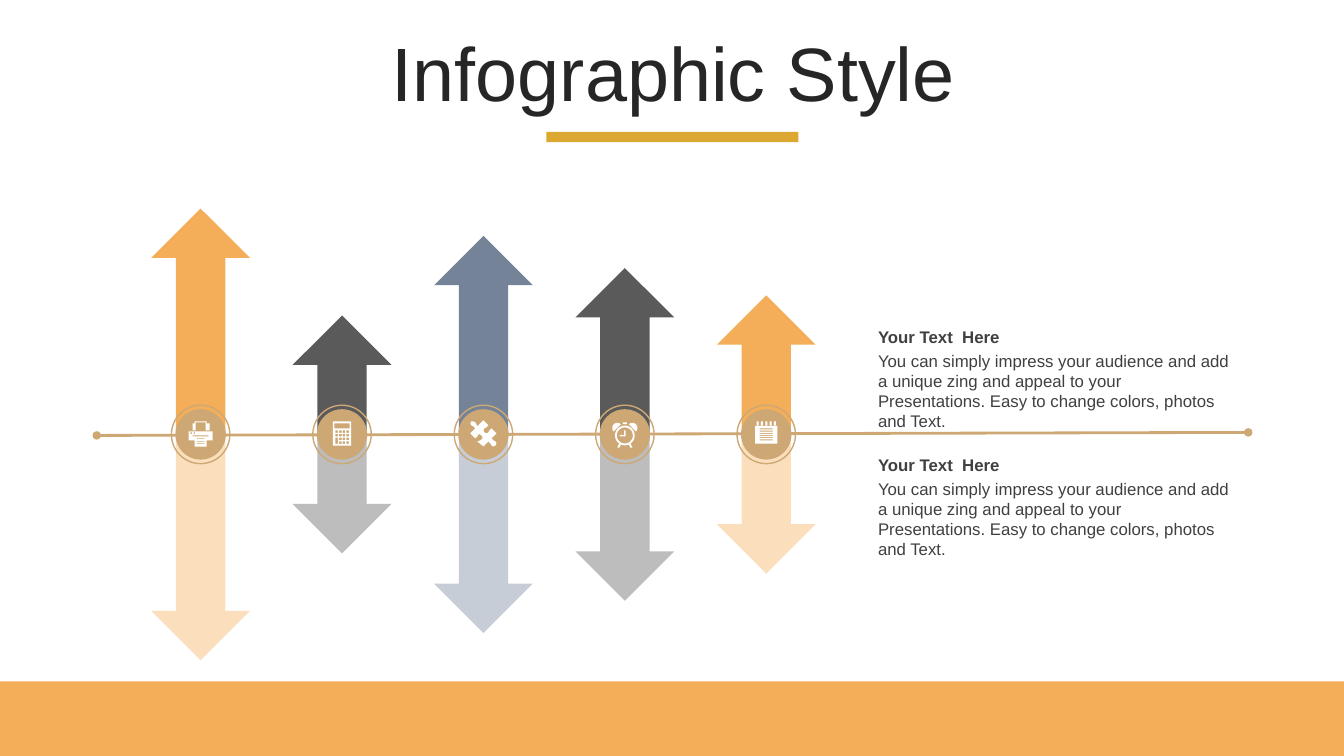
from math import cos, radians, sin

from pptx import Presentation
from pptx.dml.color import RGBColor
from pptx.enum.shapes import MSO_CONNECTOR as CONNECTOR, MSO_SHAPE as SHAPE
from pptx.enum.text import MSO_ANCHOR as ANCHOR, MSO_AUTO_SIZE as AUTO, PP_ALIGN as ALIGN
from pptx.oxml import parse_xml
from pptx.oxml.ns import nsdecls
from pptx.util import Inches, Pt

ORANGE, GOLD, TAN, WHITE = "F4AE59", "DDA832", "CDA874", "FFFFFF"
FIRST_X, LAST_X, AXIS_Y = 1.99, 7.6, 4.31
ARROW_WIDTH = 0.98


def color(hex_code):
    return RGBColor.from_string(hex_code)


def apply(target, values):
    for name, value in values.items():
        setattr(target, name, value)


def box(x, y, width, height):
    return [(x, y), (x + width, y), (x + width, y + height), (x, y + height)]


def arc(x, y, radius, start=0, end=360):
    """Points along a circle, angles in degrees clockwise from the right."""
    angles = [radians(start + (end - start) * step / 24) for step in range(25)]
    return [(x + radius * cos(a), y + radius * sin(a)) for a in angles]


def mirror(points):
    return [(-x, y) for x, y in points]


class InfographicSlide:
    title_format = {"name": "Arial", "size": Pt(54), "bold": False}
    text_format = {"name": "Arial", "size": Pt(12)}

    def __init__(self, deck):
        self.slide = deck.slides.add_slide(deck.slide_layouts[5])
        self.shapes = self.slide.shapes

    def set_words(self, frame, words, font_values, hex_code):
        frame.text = words
        font = frame.paragraphs[0].runs[0].font
        apply(font, font_values)
        font.color.rgb = color(hex_code)

    def title(self, words):
        heading = self.shapes.title
        apply(heading, {"left": Inches(0.35), "top": Inches(0.37),
                        "width": Inches(12.66), "height": Inches(0.79)})
        frame = heading.text_frame
        self.set_words(frame, words, self.title_format, "262626")
        apply(frame, {"auto_size": AUTO.NONE, "vertical_anchor": ANCHOR.MIDDLE})
        apply(frame.paragraphs[0], {"alignment": ALIGN.CENTER, "line_spacing": 0.9,
                                    "space_before": Pt(10)})

    def text(self, x, y, height, words, bold=False):
        frame = self.shapes.add_textbox(
            Inches(x), Inches(y), Inches(3.72), Inches(height)).text_frame
        apply(frame, {"word_wrap": True, "auto_size": AUTO.SHAPE_TO_FIT_TEXT})
        self.set_words(frame, words, {**self.text_format, "bold": bold}, "404040")

    def paint(self, shape, fill=None, line=None):
        shape.shadow.inherit = False
        if fill:
            shape.fill.solid()
            shape.fill.fore_color.rgb = color(fill)
        else:
            shape.fill.background()
        if line:
            shape.line.color.rgb = color(line)
            shape.line.width = Pt(1)
        else:
            shape.line.fill.background()

    def shape(self, kind, x, y, width, height, fill=None, line=None):
        added = self.shapes.add_shape(
            kind, Inches(x), Inches(y), Inches(width), Inches(height))
        self.paint(added, fill, line)

    def circle(self, x, y, size, fill=None, line=None):
        self.shape(SHAPE.OVAL, x - size / 2, y - size / 2, size, size, fill, line)

    def axis(self, x1, y1, x2, y2):
        link = self.shapes.add_connector(
            CONNECTOR.STRAIGHT, Inches(x1), Inches(y1), Inches(x2), Inches(y2))
        link.line.color.rgb = color(TAN)
        link.line.width = Pt(2)
        outline = link.line._get_or_add_ln()
        for end in ("headEnd", "tailEnd"):
            outline.append(parse_xml(f'<a:{end} {nsdecls("a")} type="oval"/>'))
        outline.addnext(parse_xml(f'<a:effectLst {nsdecls("a")}/>'))

    def icon(self, x, y, contours):
        """Draw closed contours, given in hundredths of an inch around (x, y)."""
        placed = [[(Inches(x + dx / 100), Inches(y + dy / 100)) for dx, dy in contour]
                  for contour in contours]
        builder = self.shapes.build_freeform(*placed[0][0], scale=1.0)
        for contour in placed:
            builder.move_to(*contour[0])
            builder.add_line_segments(contour[1:], close=True)
        self.paint(builder.convert_to_shape(), WHITE)


def printer():
    feeder = [(-6, -13), (6, -13), (6, -11), (9, -11), (9, -4), (5, -4), (5, -12),
              (-5, -12), (-5, -4), (-8, -4), (-8, -11), (-6, -11)]
    lights = [box(x, -2, 1.5, 1.5) for x in (-10, -7)]
    printed_lines = [box(-4, y, 8, 0.7) for y in (4, 7, 9)]
    return [feeder, box(-12, -3, 24, 9), box(-8, 1, 16, 1),
            box(-6, 6, 12, 6), *lights, *printed_lines]


def calculator():
    keys = [box(-6.5 + 3.6 * column, -4 + 3.6 * row, 2.5, 2.5)
            for row in range(4) for column in range(4) if column or row < 2]
    return [box(-9, -13, 18, 24), box(-7.5, -11, 15, 5),
            box(-6.5, 3.2, 2.5, 6.1), *keys]


def puzzle():
    return [[(-12, -13), (-13, -11), (-12, -9), (-10, -8), (-8, -6), (-13, -1), (-8, 4),
             (-6, 2), (-5, 0), (-3, 0), (-1, 2), (-1, 4), (-3, 6), (-6, 7), (0, 12),
             (5, 7), (7, 9), (8, 11), (10, 12), (12, 11), (13, 9), (12, 7), (10, 6),
             (8, 4), (13, -1), (8, -6), (6, -4), (5, -2), (3, -1), (1, -2), (0, -4),
             (1, -6), (3, -7), (5, -9), (0, -14), (-6, -8), (-7, -10), (-8, -12),
             (-10, -13)]]


def alarm_clock():
    hands = [(-0.8, -4), (0.8, -4), (0.8, 2), (-5, 2), (-5, 0.4), (-0.8, 0.4)]
    bell = arc(7.5, -6.5, 5, -135, 45)
    leg = [(3.5, 9.6), (5.5, 8.6), (7.5, 13), (5.5, 13)]
    return [arc(0, 1, 9.8), arc(0, 1, 8), hands, bell, mirror(bell),
            leg, mirror(leg), box(-2, -12, 4, 1.8)]


def notepad():
    rings = [box(-9.5 + 4.25 * ring, -13, 2, 4) for ring in range(5)]
    rules = [box(-6.5, -6 + 2.2 * rule, 13, 1) for rule in range(6)]
    return [box(-11, -8.5, 22, 17.5), *rings, *rules]


COLUMNS = [  # length, upper colour, lower colour, icon
    (2.24, ORANGE, "FBDFBD", printer),
    (1.18, "5A5A5A", "BDBDBD", calculator),
    (1.97, "748398", "C7CDD6", puzzle),
    (1.65, "5A5A5A", "BDBDBD", alarm_clock),
    (1.38, ORANGE, "FBDFBD", notepad),
]
DESCRIPTION = ("You can simply impress your audience and add a unique zing and appeal "
               "to your Presentations. Easy to change colors, photos and Text.")


def main():
    deck = Presentation()
    apply(deck, {"slide_width": Inches(13.33), "slide_height": Inches(7.5)})
    page = InfographicSlide(deck)
    page.title("Infographic Style")
    page.shape(SHAPE.RECTANGLE, 5.42, 1.31, 2.5, 0.1, GOLD)
    page.shape(SHAPE.RECTANGLE, 0, 6.76, 13.33, 0.74, ORANGE)

    for top in (3.19, 4.46):
        page.text(8.61, top + 0.24, 0.71, DESCRIPTION)
        page.text(8.61, top, 0.3, "Your Text  Here", bold=True)

    step = (LAST_X - FIRST_X) / (len(COLUMNS) - 1)
    centers = [FIRST_X + step * index for index in range(len(COLUMNS))]
    for center, (length, upper, lower, _) in zip(centers, COLUMNS):
        left = center - ARROW_WIDTH / 2
        page.shape(SHAPE.DOWN_ARROW, left, AXIS_Y, ARROW_WIDTH, length, lower)
        page.shape(SHAPE.UP_ARROW, left, AXIS_Y - length, ARROW_WIDTH, length, upper)
    page.axis(12.38, 4.29, 0.96, 4.32)
    for center, (*_, icon) in zip(centers, COLUMNS):
        page.circle(center, AXIS_Y, 0.5, fill=TAN)
        page.circle(center, AXIS_Y, 0.58, line=TAN)
        page.icon(center, AXIS_Y, icon())
    deck.save("out.pptx")


if __name__ == "__main__":
    main()
